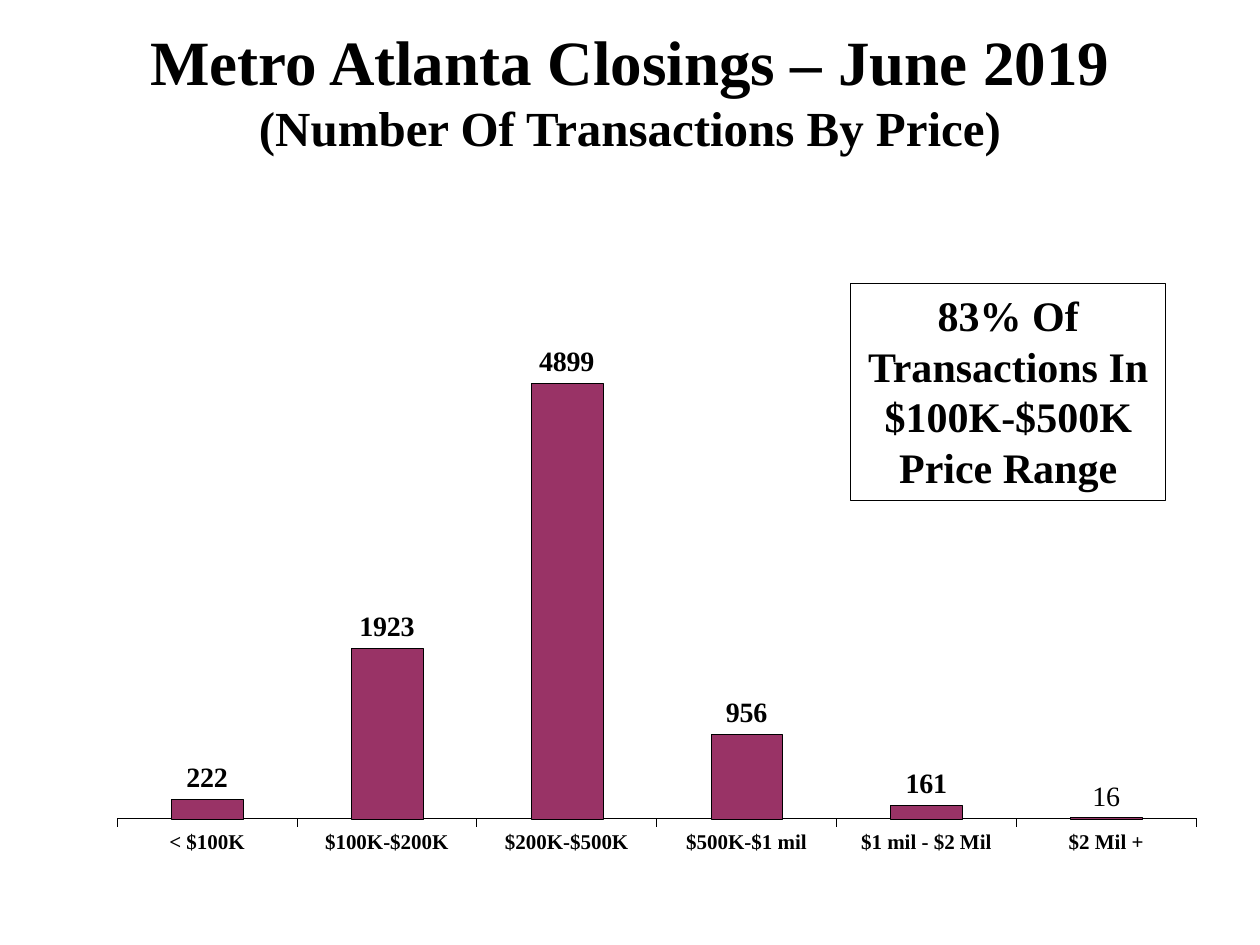
from dataclasses import dataclass

from lxml.etree import SubElement
from pptx import Presentation
from pptx.chart.data import CategoryChartData
from pptx.chart.chart import Chart
from pptx.dml.color import RGBColor
from pptx.enum.chart import XL_CHART_TYPE, XL_LABEL_POSITION, XL_TICK_LABEL_POSITION, XL_TICK_MARK
from pptx.enum.shapes import MSO_SHAPE
from pptx.enum.text import MSO_ANCHOR, PP_ALIGN
from pptx.oxml.ns import qn
from pptx.slide import Slide
from pptx.text.text import Font, TextFrame
from pptx.util import Cm, Pt

FONT_NAME = "Times New Roman"
BLACK = "000000"
PLUM = "993366"


@dataclass(frozen=True)
class PriceRange:
    label: str
    closings: int
    bold: bool = True


@dataclass(frozen=True)
class TextLine:
    text: str
    size: int


PRICE_RANGES = [
    PriceRange("< $100K", 222),
    PriceRange("$100K-$200K", 1923),
    PriceRange("$200K-$500K", 4899),
    PriceRange("$500K-$1 mil", 956),
    PriceRange("$1 mil - $2 Mil", 161),
    PriceRange("$2 Mil +", 16, bold=False),
]
TITLE_LINES = [
    TextLine("Metro Atlanta Closings – June 2019", 36),
    TextLine("(Number Of Transactions By Price)", 28),
]
CALLOUT_LINES = [TextLine("83% Of Transactions In $100K-$500K Price Range", 24)]


def color(value: str) -> RGBColor:
    return RGBColor.from_string(value)


def format_font(font: Font, size: float, bold: bool = True) -> None:
    font.name = FONT_NAME
    font.size = Pt(size)
    font.bold = bold
    font.color.rgb = color(BLACK)


def write_text(frame: TextFrame, lines: list[TextLine], *, anchor: MSO_ANCHOR) -> None:
    frame.word_wrap = True
    frame.vertical_anchor = anchor
    paragraph = frame.paragraphs[0]
    paragraph.alignment = PP_ALIGN.CENTER
    for index, line in enumerate(lines):
        if index:
            paragraph.add_line_break()
        run = paragraph.add_run()
        run.text = line.text
        format_font(run.font, line.size)


def place_plot(chart: Chart, x: float, y: float, width: float, height: float) -> None:
    plot_area = chart.element.find(".//" + qn("c:plotArea"))
    for layout in plot_area.findall(qn("c:layout")):
        plot_area.remove(layout)
    layout = SubElement(plot_area, qn("c:layout"))
    plot_area.insert(0, layout)
    manual = SubElement(layout, qn("c:manualLayout"))
    settings = {"layoutTarget": "inner", "xMode": "edge", "yMode": "edge",
                "x": x, "y": y, "w": width, "h": height}
    for name, value in settings.items():
        SubElement(manual, qn(f"c:{name}")).set("val", str(value))


def add_closings_chart(slide: Slide) -> None:
    data = CategoryChartData(number_format="0")
    data.categories = [price_range.label for price_range in PRICE_RANGES]
    data.add_series("Series 1", [price_range.closings for price_range in PRICE_RANGES])
    chart = slide.shapes.add_chart(XL_CHART_TYPE.COLUMN_CLUSTERED, Cm(1.73), Cm(3.96),
                                   Cm(22.61), Cm(13.87), data).chart
    chart.has_legend = False
    chart.has_title = False
    format_font(chart.font, 12)
    place_plot(chart, 0.028, 0.129, 0.962, 0.776)

    value_axis = chart.value_axis
    value_axis.minimum_scale = 0
    value_axis.maximum_scale = 6000
    value_axis.has_major_gridlines = False
    value_axis.visible = False

    category_axis = chart.category_axis
    category_axis.tick_label_position = XL_TICK_LABEL_POSITION.LOW
    category_axis.major_tick_mark = XL_TICK_MARK.OUTSIDE
    category_axis.format.line.color.rgb = color(BLACK)
    category_axis.format.line.width = Pt(0.01)
    format_font(category_axis.tick_labels.font, 12)

    plot = chart.plots[0]
    plot.gap_width = 150
    plot.vary_by_categories = False
    series = plot.series[0]
    series.format.fill.solid()
    series.format.fill.fore_color.rgb = color(PLUM)
    series.format.line.color.rgb = color(BLACK)
    series.format.line.width = Pt(0.06)

    labels = series.data_labels
    labels.show_value = True
    labels.number_format = "0"
    labels.number_format_is_linked = False
    labels.position = XL_LABEL_POSITION.OUTSIDE_END
    format_font(labels.font, 16)
    for index, price_range in enumerate(PRICE_RANGES):
        if not price_range.bold:
            label = series.points[index].data_label
            format_font(label.font, 16, bold=False)
            label.position = XL_LABEL_POSITION.OUTSIDE_END


def add_title(slide: Slide) -> None:
    title = slide.shapes.add_textbox(0, Cm(1.27), Cm(25.4), Cm(1.07))
    write_text(title.text_frame, TITLE_LINES, anchor=MSO_ANCHOR.MIDDLE)


def add_callout(slide: Slide) -> None:
    callout = slide.shapes.add_shape(MSO_SHAPE.RECTANGLE, Cm(17.15), Cm(5.72), Cm(6.35), Cm(4.37))
    callout.shadow.inherit = False
    callout.fill.background()
    callout.line.color.rgb = color(BLACK)
    callout.line.width = Pt(0.75)
    write_text(callout.text_frame, CALLOUT_LINES, anchor=MSO_ANCHOR.TOP)


def main() -> None:
    presentation = Presentation()
    presentation.slide_width = Cm(25.4)
    presentation.slide_height = Cm(19.05)
    slide = presentation.slides.add_slide(presentation.slide_layouts[6])
    add_closings_chart(slide)
    add_title(slide)
    add_callout(slide)
    presentation.save("out.pptx")


if __name__ == "__main__":
    main()
